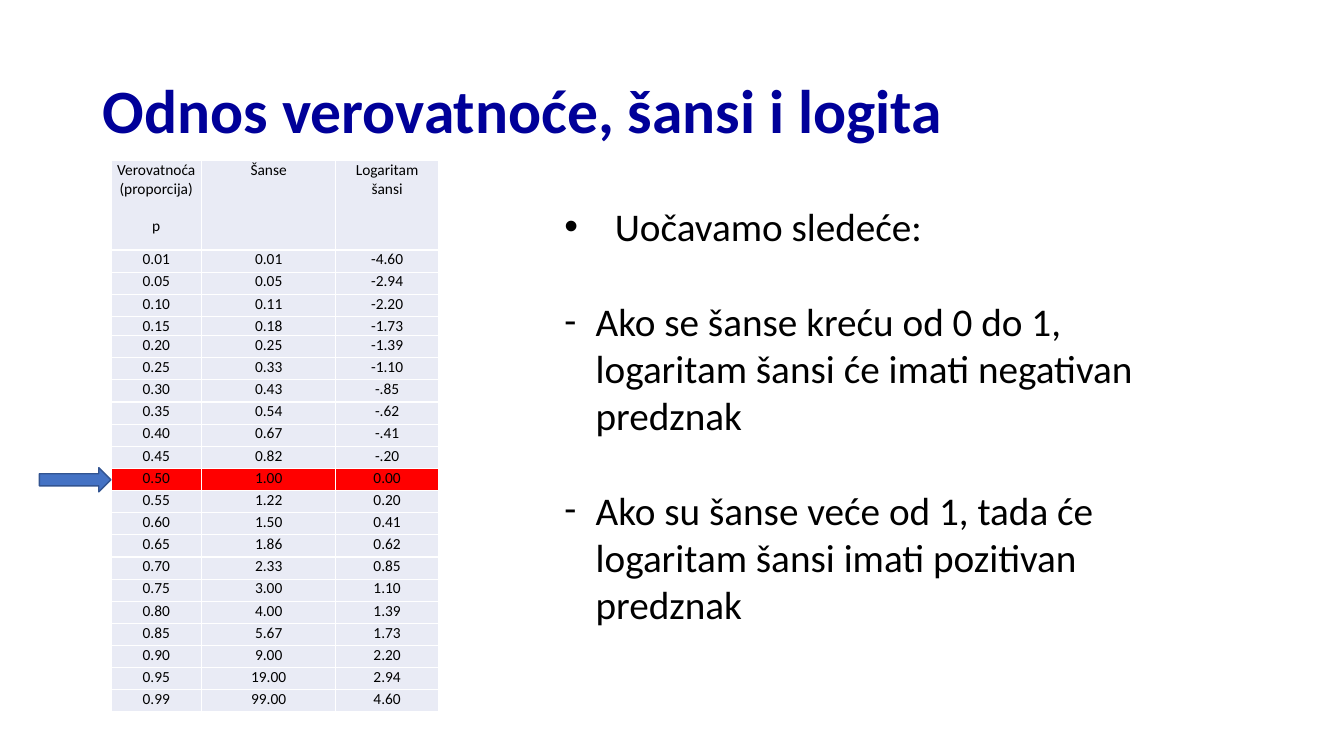
"""Build the slide relating probability, odds and logit."""
from dataclasses import dataclass

from lxml import etree
from pptx import Presentation
from pptx.dml.color import RGBColor
from pptx.enum import shapes, text
from pptx.oxml import ns
from pptx.util import Inches, Pt

HEADING = "Odnos verovatnoće, šansi i logita"
HEADER = [["Verovatnoća", "(proporcija)", "p"], ["Šanse"], ["Logaritam šansi"]]
ODDS_ROWS = [
    ("0.01", "0.01", "-4.60"),
    ("0.05", "0.05", "-2.94"),
    ("0.10", "0.11", "-2.20"),
    ("0.15", "0.18", "-1.73"),
    ("0.20", "0.25", "-1.39"),
    ("0.25", "0.33", "-1.10"),
    ("0.30", "0.43", "-.85"),
    ("0.35", "0.54", "-.62"),
    ("0.40", "0.67", "-.41"),
    ("0.45", "0.82", "-.20"),
    ("0.50", "1.00", "0.00"),
    ("0.55", "1.22", "0.20"),
    ("0.60", "1.50", "0.41"),
    ("0.65", "1.86", "0.62"),
    ("0.70", "2.33", "0.85"),
    ("0.75", "3.00", "1.10"),
    ("0.80", "4.00", "1.39"),
    ("0.85", "5.67", "1.73"),
    ("0.90", "9.00", "2.20"),
    ("0.95", "19.00", "2.94"),
    ("0.99", "99.00", "4.60"),
]
EVEN_ODDS = "0.50"
TIGHT_ROW = "0.15"
OBSERVATIONS = [
    ("•", 0.5, 0, "Uočavamo sledeće:"),
    ("-", 0.31, 34, "Ako se šanse kreću od 0 do 1, logaritam šansi će imati negativan predznak"),
    ("-", 0.31, 34, "Ako su šanse veće od 1, tada će logaritam šansi imati pozitivan predznak"),
]
COLUMN_WIDTHS = [0.9, 1.33, 1.02]
HEADER_HEIGHT, ROW_HEIGHT, TIGHT_HEIGHT = 0.89, 0.22, 0.19


@dataclass(frozen=True)
class Theme:
    font: str = "Calibri"
    navy: str = "000099"
    ink: str = "000000"
    pale: str = "E9EBF5"
    highlight: str = "FF0000"
    border: str = "FFFFFF"
    arrow: str = "4472C4"
    arrow_edge: str = "325491"
    heading_size: int = 44
    body_size: int = 28
    cell_size: int = 11


THEME = Theme()


def apply(target, **values):
    """Set every given attribute on the target."""
    for attribute, value in values.items():
        setattr(target, attribute, value)


def box(left, top, width, height):
    """Return a rectangle given in inches as lengths."""
    return [Inches(length) for length in (left, top, width, height)]


def write(paragraph, words, size, color, bold=False):
    """Add one formatted run to a paragraph."""
    run = paragraph.add_run()
    run.text = words
    apply(run.font, name=THEME.font, size=Pt(size), bold=bold)
    run.font.color.rgb = RGBColor.from_string(color)


def add_bullet(paragraph, mark, indent):
    """Give a paragraph a hanging bullet."""
    properties = paragraph._p.get_or_add_pPr()
    properties.set("marL", str(Inches(indent)))
    properties.set("indent", str(-Inches(indent)))
    etree.SubElement(properties, ns.qn("a:buFont")).set("typeface", "Arial" if mark == "•" else THEME.font)
    etree.SubElement(properties, ns.qn("a:buChar")).set("char", mark)


def add_borders(cell):
    """Draw a thin border on all four sides of a cell."""
    properties = cell._tc.get_or_add_tcPr()
    for side in ("lnL", "lnR", "lnT", "lnB"):
        line = etree.SubElement(properties, ns.qn(f"a:{side}"), w=str(Pt(1)))
        fill = etree.SubElement(line, ns.qn("a:solidFill"))
        etree.SubElement(fill, ns.qn("a:srgbClr"), val=THEME.border)


def fill_cell(cell, lines, color):
    """Format a cell and write its centred lines."""
    side = Inches(0.05)
    apply(cell, margin_left=side, margin_right=side, margin_top=0, margin_bottom=0)
    add_borders(cell)
    cell.fill.solid()
    cell.fill.fore_color.rgb = RGBColor.from_string(color)
    for index, line in enumerate(lines):
        paragraph = cell.text_frame.add_paragraph() if index else cell.text_frame.paragraphs[0]
        paragraph.alignment = text.PP_ALIGN.CENTER
        if line == "p":
            paragraph.space_before = Pt(13.4)
        write(paragraph, line, THEME.cell_size, THEME.ink)


def add_heading(slide):
    """Place and write the slide title."""
    heading = slide.shapes.title
    left, top, width, height = box(0.92, 0.4, 11.5, 1.45)
    apply(heading, left=left, top=top, width=width, height=height)
    apply(heading.text_frame, vertical_anchor=text.MSO_ANCHOR.MIDDLE, word_wrap=True)
    paragraph = heading.text_frame.paragraphs[0]
    apply(paragraph, alignment=text.PP_ALIGN.LEFT, line_spacing=0.9)
    write(paragraph, HEADING, THEME.heading_size, THEME.navy, bold=True)


def add_odds_table(slide):
    """Add the table of probabilities, odds and logits."""
    rows = [HEADER] + [[[value] for value in row] for row in ODDS_ROWS]
    heights = [HEADER_HEIGHT] + [
        TIGHT_HEIGHT if row[0] == TIGHT_ROW else ROW_HEIGHT for row in ODDS_ROWS
    ]
    place = box(1.1, 1.59, sum(COLUMN_WIDTHS), sum(heights))
    odds = slide.shapes.add_table(len(rows), len(COLUMN_WIDTHS), *place).table
    apply(odds, first_row=False, horz_banding=False)
    for column, width in zip(odds.columns, COLUMN_WIDTHS):
        column.width = Inches(width)
    for row, height, entries in zip(odds.rows, heights, rows):
        row.height = Inches(height)
        color = THEME.highlight if entries[0] == [EVEN_ODDS] else THEME.pale
        for cell, lines in zip(row.cells, entries):
            fill_cell(cell, lines, color)


def add_pointer(slide):
    """Point an arrow at the row of even odds."""
    pointer = slide.shapes.add_shape(shapes.MSO_SHAPE.RIGHT_ARROW, *box(0.39, 4.64, 0.71, 0.24))
    pointer.shadow.inherit = False
    pointer.fill.solid()
    pointer.fill.fore_color.rgb = RGBColor.from_string(THEME.arrow)
    pointer.line.color.rgb = RGBColor.from_string(THEME.arrow_edge)
    pointer.line.width = Pt(1)


def add_observations(slide):
    """Add the bulleted observations."""
    frame = slide.shapes.add_textbox(*box(5.5, 1.96, 6.03, 4.64)).text_frame
    frame.word_wrap = True
    for index, (mark, indent, gap, words) in enumerate(OBSERVATIONS):
        paragraph = frame.add_paragraph() if index else frame.paragraphs[0]
        paragraph.space_before = Pt(gap)
        add_bullet(paragraph, mark, indent)
        write(paragraph, words, THEME.body_size, THEME.ink)


def main():
    """Assemble and save the presentation."""
    deck = Presentation()
    apply(deck, slide_width=Inches(13.33), slide_height=Inches(7.5))
    slide = deck.slides.add_slide(deck.slide_layouts.get_by_name("Title Only"))
    for add_part in (add_heading, add_odds_table, add_pointer, add_observations):
        add_part(slide)
    deck.save("out.pptx")


if __name__ == "__main__":
    main()
